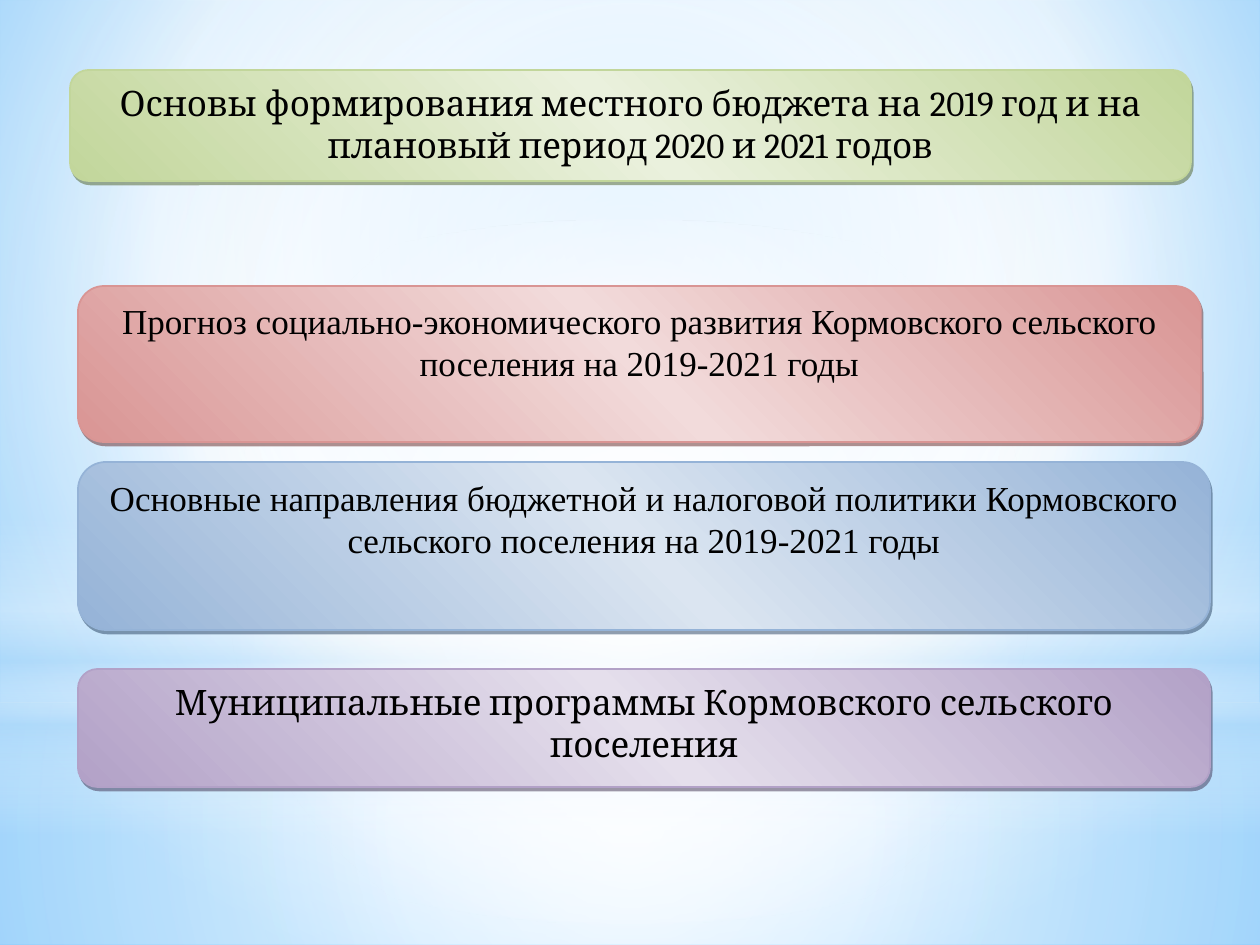
from lxml import etree
from pptx import Presentation
from pptx import util as u
from pptx.dml.color import RGBColor
from pptx.enum import shapes, text
from pptx.oxml import ns

PX = 914400 / 126  # EMU in one px
WIDTH, HEIGHT = 1260, 945

BLACK = RGBColor(0x00, 0x00, 0x00)
WHITE = RGBColor(0xFF, 0xFF, 0xFF)
SKY = RGBColor(0x9E, 0xD5, 0xFF)
DEEP_SKY = RGBColor(0x5B, 0xB9, 0xFF)
HAZE = RGBColor(0xB4, 0xDC, 0xFA)
# Each palette: edge, middle, shadow
GREEN = RGBColor(0xC2, 0xD6, 0x9B), RGBColor(0xEA, 0xF1, 0xDD), RGBColor(0x4E, 0x61, 0x28)
RED = RGBColor(0xD9, 0x95, 0x94), RGBColor(0xF2, 0xDB, 0xDB), RGBColor(0x62, 0x24, 0x23)
BLUE = RGBColor(0x95, 0xB3, 0xD7), RGBColor(0xDB, 0xE5, 0xF1), RGBColor(0x24, 0x3F, 0x60)
PURPLE = RGBColor(0xB2, 0xA1, 0xC7), RGBColor(0xE5, 0xDF, 0xEC), RGBColor(0x3F, 0x31, 0x51)

CENTER = (50, 50, 50, 50)

# Bars: box, palette, font, wording
BARS = [
    ((70, 70, 1121, 111), GREEN, "Cambria",
     "Основы формирования местного бюджета на 2019 год и на плановый период 2020 и 2021 годов"),
    ((78, 286, 1123, 156), RED, "Times New Roman",
     "Прогноз социально-экономического развития Кормовского сельского поселения на 2019-2021 годы"),
    ((78, 462, 1132, 168), BLUE, "Times New Roman",
     "Основные направления бюджетной и налоговой политики Кормовского сельского поселения "
     "на 2019-2021 годы"),
    ((78, 669, 1132, 118), PURPLE, "Cambria",
     "Муниципальные программы Кормовского сельского поселения"),
]


def px(length):
    return u.Emu(round(length * PX))


def add_node(parent, tag, **attributes):
    values = {name: str(value) for name, value in attributes.items()}
    return etree.SubElement(parent, ns.qn(tag), values)


def add_color(parent, color, opacity):
    node = add_node(parent, "a:srgbClr", val=color)
    if opacity < 100:
        add_node(node, "a:alpha", val=opacity * 1000)


def set_gradient(owner, fill, stops, angle=None, focus=CENTER):
    """Fill with (position, colour, opacity) stops, linear if an angle is given."""
    fill.gradient()
    gradient = owner.element.find(".//" + ns.qn("a:gradFill"))
    for child in list(gradient):
        gradient.remove(child)
    stop_list = add_node(gradient, "a:gsLst")
    for position, color, opacity in stops:
        add_color(add_node(stop_list, "a:gs", pos=position * 1000), color, opacity)
    if angle is not None:
        add_node(gradient, "a:lin", ang=angle * 60000, scaled=0)
    else:
        circle = add_node(gradient, "a:path", path="circle")
        sides = {side: share * 1000 for side, share in zip("ltrb", focus)}
        add_node(circle, "a:fillToRect", **sides)


def add_filled(page, kind, box, stops, angle=None):
    shape = page.shapes.add_shape(kind, *map(px, box))
    shape.shadow.inherit = False
    shape.line.fill.background()
    set_gradient(shape, shape.fill, stops, angle)
    return shape


def draw_backdrop(page, box):
    left, top, width, height = box
    horizon = top + 703
    rectangle, oval = shapes.MSO_SHAPE.RECTANGLE, shapes.MSO_SHAPE.OVAL
    set_gradient(page, page.background.fill,
                 [(0, SKY, 100), (60, WHITE, 100), (100, DEEP_SKY, 100)],
                 focus=(20, 10, 20, 60))
    # Ground and sky veils
    add_filled(page, rectangle, (left, horizon, width, height - 703),
               [(0, WHITE, 91), (37, WHITE, 76), (100, HAZE, 79)])
    add_filled(page, rectangle, (left, top, width, 703),
               [(0, WHITE, 89), (48, WHITE, 62), (100, HAZE, 79)])
    # Horizon band and central glow
    add_filled(page, rectangle, (left, top + 519, width, 315),
               [(0, WHITE, 0), (29, WHITE, 30), (45, HAZE, 40),
                (55, WHITE, 26), (65, HAZE, 60), (100, WHITE, 0)], angle=90)
    add_filled(page, oval, (left, top + 220, width, 703),
               [(0, WHITE, 100), (56, WHITE, 0)])


def draw_bar(page, box, palette, font, wording):
    edge, middle, shade = palette
    bar = add_filled(page, shapes.MSO_SHAPE.ROUNDED_RECTANGLE, box,
                     [(0, edge, 100), (50, middle, 100), (100, edge, 100)], angle=315)
    bar.line.color.rgb = edge
    bar.line.width = u.Pt(1)
    # Hard drop shadow
    effects = bar.element.spPr.find(ns.qn("a:effectLst"))
    shadow = add_node(effects, "a:outerShdw", blurRad=0, dist=u.Pt(2.2),
                      dir=63 * 60000, algn="ctr", rotWithShape=0)
    add_color(shadow, shade, 50)
    # Wording
    frame = bar.text_frame
    frame.text = wording
    frame.word_wrap = True
    frame.vertical_anchor = text.MSO_ANCHOR.TOP
    para = frame.paragraphs[0]
    para.alignment = text.PP_ALIGN.CENTER
    para.space_after = u.Pt(10)
    span = para.runs[0]
    span.font.name = font
    span.font.size = u.Pt(20)
    span.font.color.rgb = BLACK


def main():
    deck = Presentation()
    deck.slide_width, deck.slide_height = px(WIDTH), px(HEIGHT)
    page = deck.slides.add_slide(deck.slide_layouts[6])
    draw_backdrop(page, (0, 0, WIDTH, HEIGHT))
    for bar in BARS:
        draw_bar(page, *bar)
    deck.save("out.pptx")


if __name__ == "__main__":
    main()
